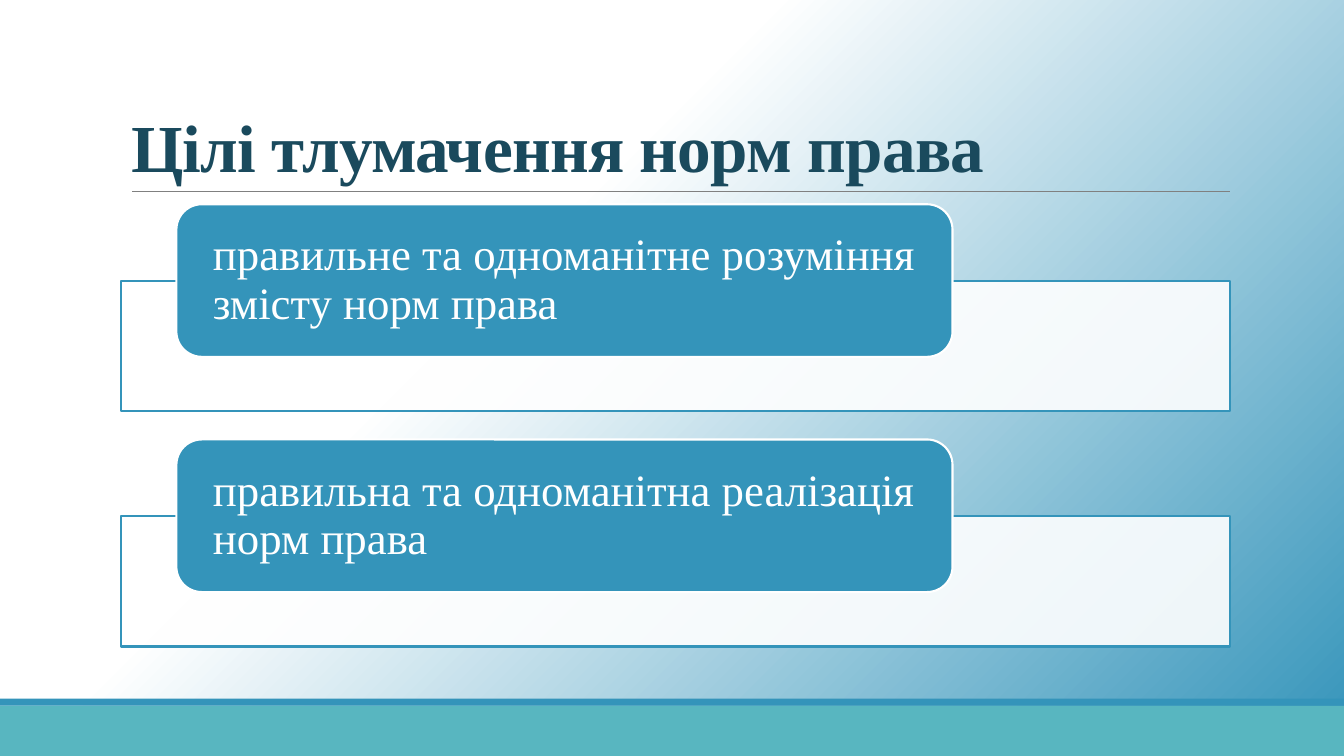
from lxml.etree import SubElement
from pptx import Presentation
from pptx.dml.color import RGBColor
from pptx.enum.shapes import MSO_CONNECTOR, MSO_SHAPE
from pptx.enum.text import MSO_ANCHOR, MSO_AUTO_SIZE, PP_ALIGN
from pptx.oxml.ns import qn
from pptx.util import Pt

FONT = "Times New Roman"
BLUE, TEAL, NAVY, WHITE, GRAY = "3494BA", "58B6C0", "1A4A5D", "FFFFFF", "808080"
GOALS = [
    "правильне та одноманітне розуміння змісту норм права",
    "правильна та одноманітна реалізація норм права",
]


def rgb(color):
    return RGBColor.from_string(color)


def add_box(s, kind, x, y, w, h, fill, line=None):
    sp = s.shapes.add_shape(kind, Pt(x), Pt(y), Pt(w), Pt(h))
    sp.shadow.inherit = False
    sp.fill.solid()
    sp.fill.fore_color.rgb = rgb(fill)
    if line:
        sp.line.color.rgb = rgb(line)
        sp.line.width = Pt(1.5)
    else:
        sp.line.fill.background()
    return sp


def write(tf, text, size, color, spacing, anchor, bold=False):
    tf.text = text
    tf.word_wrap = True
    tf.auto_size = MSO_AUTO_SIZE.NONE
    tf.vertical_anchor = anchor
    p = tf.paragraphs[0]
    p.alignment = PP_ALIGN.LEFT
    p.line_spacing = spacing
    r = p.runs[0]
    r.font.name = FONT
    r.font.size = Pt(size)
    r.font.bold = bold
    r.font.color.rgb = rgb(color)
    return p


def add_background(s):
    fill = s.background.fill
    fill.gradient()
    fill.gradient_angle = 315
    for stop, position, color in zip(fill.gradient_stops, (0.37, 1), (WHITE, BLUE)):
        stop.position = position
        stop.color.rgb = rgb(color)


def add_footer(s, x, y, w, h):
    stripe = 5
    add_box(s, MSO_SHAPE.RECTANGLE, x, y + stripe, w, h - stripe, TEAL)
    add_box(s, MSO_SHAPE.RECTANGLE, x, y, w, stripe, BLUE)


def add_title(s, x, y, w, h):
    title = s.shapes.title
    title.left, title.top, title.width, title.height = Pt(x), Pt(y), Pt(w), Pt(h)
    p = write(title.text_frame, "Цілі тлумачення норм права", 48, NAVY, 0.85,
              MSO_ANCHOR.BOTTOM, bold=True)
    p.runs[0].font._element.set("spc", "-50")
    rule = s.shapes.add_connector(MSO_CONNECTOR.STRAIGHT, Pt(x + 8), Pt(y + h),
                                  Pt(x + w), Pt(y + h))
    rule.line.color.rgb = rgb(GRAY)
    rule.line.width = Pt(0.5)
    SubElement(rule._element.spPr, qn("a:effectLst"))


def add_goal(s, text, x, y, w, h):
    label_h = 109
    panel_y = y + 54.6
    panel = add_box(s, MSO_SHAPE.RECTANGLE, x, panel_y, w, y + h - panel_y, WHITE, BLUE)
    color = panel._element.spPr.find(qn("a:solidFill"))[0]
    SubElement(color, qn("a:alpha"), val="90000")
    label = add_box(s, MSO_SHAPE.ROUNDED_RECTANGLE, x + 39.6, y, w * 0.7, label_h,
                    BLUE, WHITE)
    tf = label.text_frame
    tf.margin_left = tf.margin_right = Pt(20.8)
    tf.margin_top = tf.margin_bottom = Pt(0)
    p = write(tf, text, 32, WHITE, 0.9, MSO_ANCHOR.MIDDLE)
    p.space_after = Pt(11)


def main():
    prs = Presentation()
    prs.slide_width, prs.slide_height = Pt(960), Pt(540)
    s = prs.slides.add_slide(prs.slide_layouts[5])
    add_background(s)
    add_footer(s, 0, 499, 960, 41)
    add_title(s, 86.4, 22.3, 792, 114.5)
    for i, text in enumerate(GOALS):
        add_goal(s, text, 86.4, 145.9 + 168 * i, 792, 147.9)
    prs.save("out.pptx")


if __name__ == "__main__":
    main()
